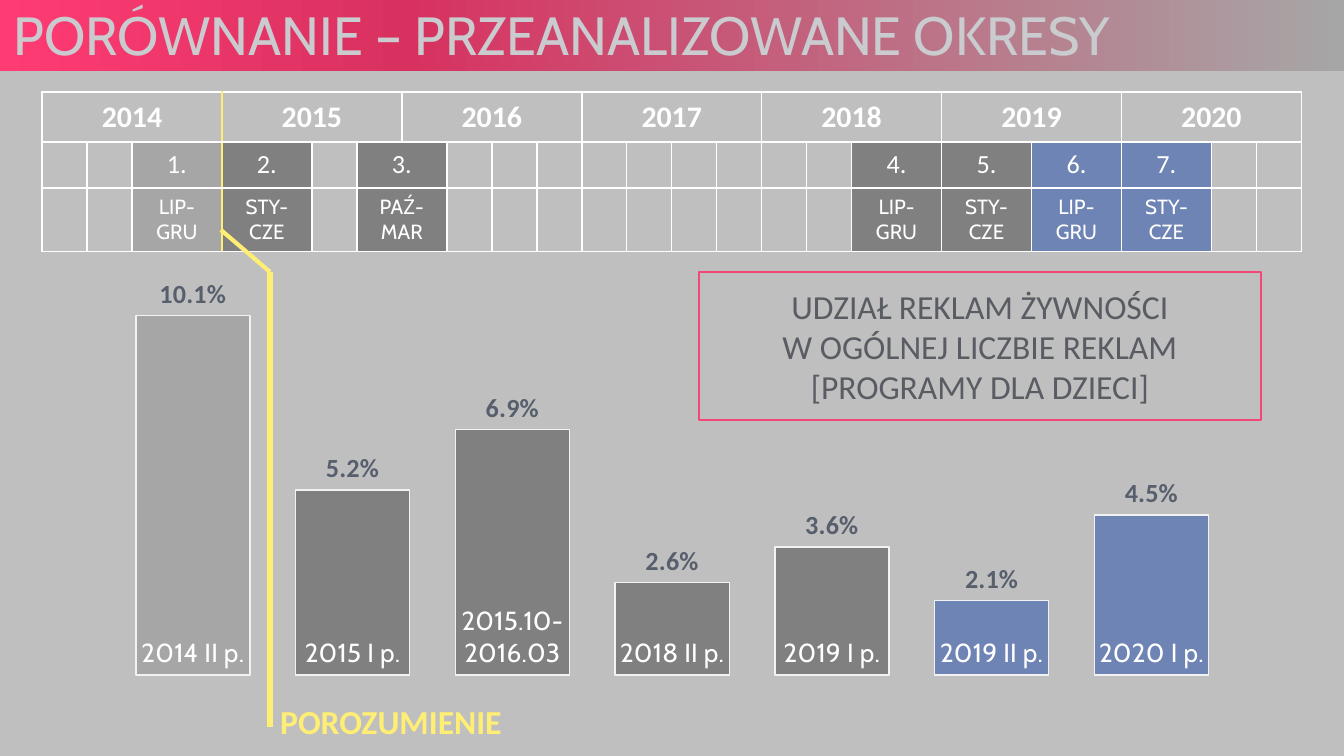
from dataclasses import dataclass

import pptx
import pptx.chart.data
import pptx.dml.color
import pptx.enum.chart
import pptx.enum.shapes
import pptx.enum.text
import pptx.oxml
import pptx.oxml.ns
import pptx.util


@dataclass(frozen=True)
class Theme:
    background: str = "BFBFBF"
    title: str = "C9CBCE"
    pink: str = "FF3B73"
    crimson: str = "D83160"
    frame: str = "F34778"
    message: str = "595D63"
    yellow: str = "FFEE74"
    white: str = "FFFFFF"
    light: str = "A6A6A6"
    dark: str = "808080"
    blue: str = "6E84B4"
    orange: str = "FE8637"
    outline: str = "F2F2F2"
    value: str = "575F6D"
    heading_font: str = "Cabin"
    body_font: str = "Calibri"
    title_size: float = 28.8
    large_size: int = 18
    year_size: int = 16
    label_size: int = 14
    month_size: int = 11
    chart_size: int = 10


theme = Theme()
PX = 914400 / 134.4

TITLE = "PORÓWNANIE – PRZEANALIZOWANE OKRESY"
YEARS = [("2014", 3), ("2015", 3), ("2016", 4), ("2017", 4), ("2018", 3), ("2019", 2), ("2020", 3)]
PERIODS = [
    (2, 1, "LIP-GRU", theme.light),
    (3, 1, "STY-CZE", theme.dark),
    (5, 2, "PAŹ-MAR", theme.dark),
    (16, 1, "LIP-GRU", theme.dark),
    (17, 1, "STY-CZE", theme.dark),
    (18, 1, "LIP-GRU", theme.blue),
    (19, 1, "STY-CZE", theme.blue),
]
SHARES = [
    ("2014 II p.", 0.101, theme.light),
    ("2015 I p.", 0.052, theme.dark),
    ("2015.10-\n2016.03", 0.069, theme.dark),
    ("2018 II p.", 0.026, theme.dark),
    ("2019 I p.", 0.036, theme.dark),
    ("2019 II p.", 0.021, theme.blue),
    ("2020 I p.", 0.045, theme.blue),
]
MESSAGE = ["UDZIAŁ REKLAM ŻYWNOŚCI", "W OGÓLNEJ LICZBIE REKLAM", "[PROGRAMY DLA DZIECI]"]
AGREEMENT = "POROZUMIENIE"
AGREEMENT_COLUMN = 3
COLUMN_COUNT = 22
HALF_YEAR = 90
ROW_HEIGHTS = [50, 46, 63]


def px(*lengths):
    return [pptx.util.Emu(round(length * PX)) for length in lengths]


def rgb(color):
    return pptx.dml.color.RGBColor.from_string(color)


def set_font(font, name, size, color, bold=False):
    font.name = name
    font.size = pptx.util.Pt(size)
    font.bold = bold
    font.color.rgb = rgb(color)


def xml(text):
    return pptx.oxml.parse_xml(text.replace(">", " " + pptx.oxml.ns.nsdecls("a", "c") + ">", 1))


def add_title(slide):
    title = slide.shapes.title
    title.left, title.top, title.width, title.height = px(0, -3, 1344, 74)
    stops = [(0, theme.light), (70, theme.crimson), (100, theme.pink)]
    gradient = "".join(f'<a:gs pos="{at * 1000}"><a:srgbClr val="{color}"/></a:gs>' for at, color in stops)
    title._element.spPr.append(
        xml(f'<a:gradFill><a:gsLst>{gradient}</a:gsLst><a:lin ang="10800000" scaled="0"/></a:gradFill>'))
    frame = title.text_frame
    frame.text = TITLE
    frame.auto_size = pptx.enum.text.MSO_AUTO_SIZE.NONE
    frame.vertical_anchor = pptx.enum.text.MSO_ANCHOR.MIDDLE
    paragraph = frame.paragraphs[0]
    paragraph.alignment = pptx.enum.text.PP_ALIGN.LEFT
    set_font(paragraph.font, theme.heading_font, theme.title_size, theme.title)


def table_content():
    content = {}
    column = 0
    for year, span in YEARS:
        content[0, column] = (year, span, None)
        column += span
    for number, (column, span, months, color) in enumerate(PERIODS, 1):
        content[1, column] = (f"{number}.", span, color)
        content[2, column] = (months, span, color)
    return content


def add_borders(cell, first, end):
    properties = cell._tc.get_or_add_tcPr()
    for side, edge in (("L", first), ("R", end), ("T", None), ("B", None)):
        color, width = (theme.yellow, 1.5) if edge == AGREEMENT_COLUMN else (theme.white, 1)
        properties.append(xml(
            f'<a:ln{side} w="{pptx.util.Pt(width)}"><a:solidFill><a:srgbClr val="{color}"/></a:solidFill></a:ln{side}>'))


def add_timeline(slide):
    wide = {column for column, span, _, _ in PERIODS if span == 1}
    widths = [HALF_YEAR if column in wide else HALF_YEAR // 2 for column in range(COLUMN_COUNT)]
    table = slide.shapes.add_table(
        len(ROW_HEIGHTS), COLUMN_COUNT, *px(42, 92, sum(widths), sum(ROW_HEIGHTS))).table
    table.first_row = table.horz_banding = False
    for column, width in zip(table.columns, px(*widths)):
        column.width = width
    for row, height in zip(table.rows, px(*ROW_HEIGHTS)):
        row.height = height
    row_fonts = [
        (theme.body_font, theme.year_size, True),
        (theme.body_font, theme.label_size, False),
        (theme.heading_font, theme.month_size, False),
    ]
    content = table_content()
    for row, (font_name, size, bold) in enumerate(row_fonts):
        for column in range(COLUMN_COUNT):
            cell = table.cell(row, column)
            text, span, color = content.get((row, column), ("", 1, None))
            if span > 1:
                cell.merge(table.cell(row, column + span - 1))
            add_borders(cell, column, column + span)
            if color:
                cell.fill.solid()
                cell.fill.fore_color.rgb = rgb(color)
            else:
                cell.fill.background()
            cell.vertical_anchor = pptx.enum.text.MSO_ANCHOR.MIDDLE
            cell.text = text
            paragraph = cell.text_frame.paragraphs[0]
            paragraph.alignment = pptx.enum.text.PP_ALIGN.CENTER
            set_font(paragraph.font, font_name, size, theme.white, bold)
            paragraph._p.get_or_add_endParaRPr().set("sz", str(theme.month_size * 100))


def add_chart(slide):
    kinds = pptx.enum.chart
    names, values, colors = zip(*SHARES)
    data = pptx.chart.data.CategoryChartData(number_format="0.0%")
    data.categories = names
    for name in ("Series 1", "Series 2"):
        data.add_series(name, values)
    chart = slide.shapes.add_chart(
        kinds.XL_CHART_TYPE.COLUMN_CLUSTERED, *px(90, 262, 1153, 435), data).chart
    chart.has_legend = chart.has_title = False
    set_font(chart.font, theme.body_font, theme.chart_size, theme.white)
    for axis in (chart.category_axis, chart.value_axis):
        axis.has_major_gridlines = False
        axis.major_tick_mark = axis.minor_tick_mark = kinds.XL_TICK_MARK.NONE
        axis.tick_label_position = kinds.XL_TICK_LABEL_POSITION.NONE
        axis.format.line.fill.background()
    chart.value_axis.minimum_scale = 0
    chart.value_axis.maximum_scale = 0.11
    chart.value_axis.major_unit = 0.01

    plot = chart.plots[0]
    plot.gap_width, plot.overlap, plot.vary_by_categories = 40, 100, False
    positions = kinds.XL_LABEL_POSITION
    styles = [
        (theme.orange, positions.OUTSIDE_END, True, theme.body_font, theme.value),
        (theme.dark, positions.INSIDE_BASE, False, theme.heading_font, theme.white),
    ]
    for series, (color, position, is_value, font_name, font_color) in zip(plot.series, styles):
        series.format.fill.solid()
        series.format.fill.fore_color.rgb = rgb(color)
        labels = series.data_labels
        labels.show_value, labels.show_category_name = is_value, not is_value
        labels.position = position
        labels.number_format, labels.number_format_is_linked = "0.0%", False
        set_font(labels.font, font_name, theme.label_size, font_color, is_value)

    bars = plot.series[1]
    for index, color in enumerate(colors):
        for part in (bars, bars.points[index]):
            part.format.line.color.rgb = rgb(theme.outline)
            part.format.line.width = pptx.util.Pt(0.75)
        bars.points[index].format.fill.solid()
        bars.points[index].format.fill.fore_color.rgb = rgb(color)

    area = chart._chartSpace.chart.plotArea
    for layout in area.findall(pptx.oxml.ns.qn("c:layout")):
        area.remove(layout)
    places = "".join(f'<c:{key} val="{value}"/>' for key, value in (
        ("layoutTarget", "inner"), ("xMode", "edge"), ("yMode", "edge"),
        ("x", 0.02), ("y", 0.05), ("w", 0.97), ("h", 0.9)))
    area.insert(0, xml(f"<c:layout><c:manualLayout>{places}</c:manualLayout></c:layout>"))


def add_message(slide):
    box = slide.shapes.add_shape(pptx.enum.shapes.MSO_SHAPE.RECTANGLE, *px(699, 272, 562, 148))
    box.shadow.inherit = False
    box.fill.background()
    box.line.color.rgb = rgb(theme.frame)
    box.line.width = pptx.util.Pt(1)
    box.text_frame.text = "\n".join(MESSAGE)
    box.text_frame.vertical_anchor = pptx.enum.text.MSO_ANCHOR.MIDDLE
    for paragraph in box.text_frame.paragraphs:
        paragraph.alignment = pptx.enum.text.PP_ALIGN.CENTER
        set_font(paragraph.font, theme.body_font, theme.large_size, theme.message)


def add_agreement(slide):
    group = slide.shapes.add_group_shape()
    for ends, width in (((270, 272, 270, 727), 3), ((221, 230, 270, 272), 2.25)):
        line = group.shapes.add_connector(pptx.enum.shapes.MSO_CONNECTOR.STRAIGHT, *px(*ends))
        line.line.color.rgb = rgb(theme.yellow)
        line.line.width = pptx.util.Pt(width)
        line._element.spPr.append(xml("<a:effectLst></a:effectLst>"))
    label = group.shapes.add_textbox(*px(267, 694, 289, 54))
    label.text_frame.word_wrap = True
    label.text_frame.text = AGREEMENT
    set_font(label.text_frame.paragraphs[0].font, theme.body_font, theme.large_size, theme.yellow, True)


def main():
    presentation = pptx.Presentation()
    presentation.slide_width, presentation.slide_height = px(1344, 756)
    slide = presentation.slides.add_slide(presentation.slide_layouts[5])
    slide.background.fill.solid()
    slide.background.fill.fore_color.rgb = rgb(theme.background)
    for add_part in (add_title, add_timeline, add_chart, add_message, add_agreement):
        add_part(slide)
    presentation.save("out.pptx")


if __name__ == "__main__":
    main()
